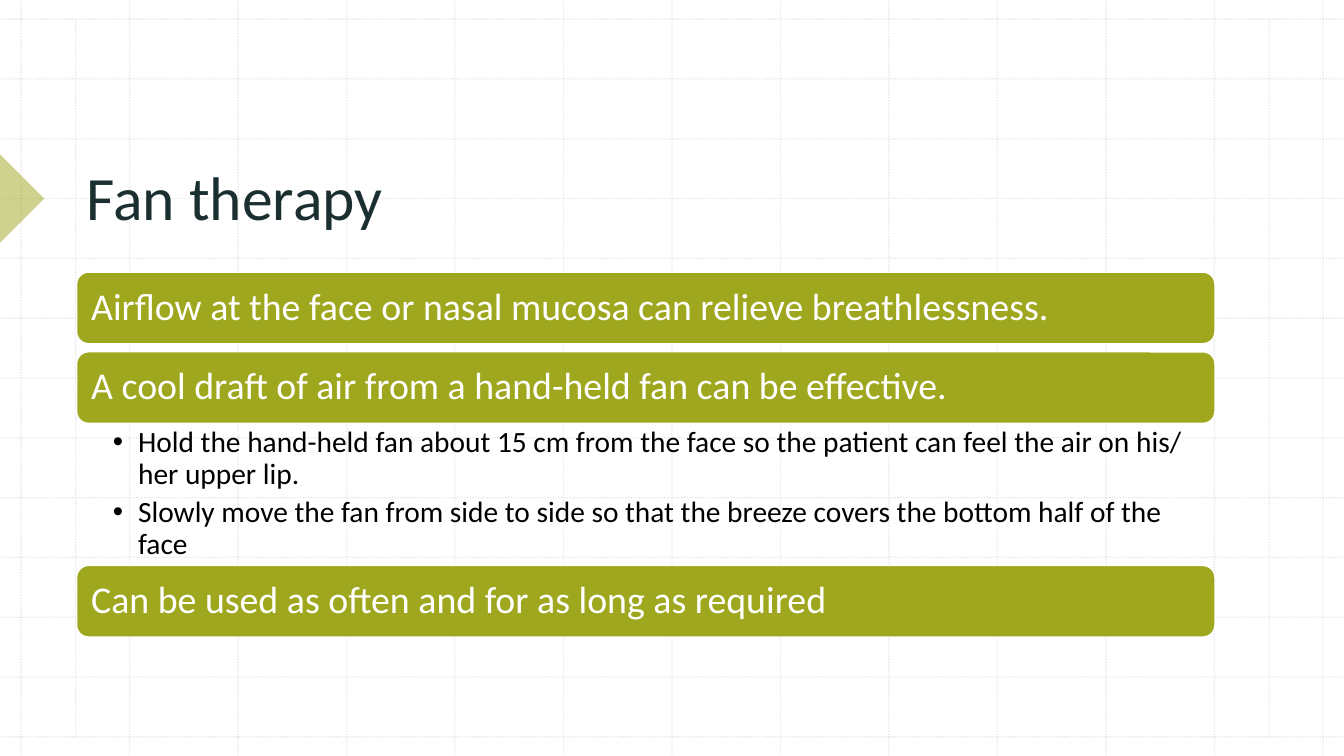
from lxml import etree
from pptx import Presentation
from pptx.dml.color import RGBColor
from pptx.enum.dml import MSO_LINE
from pptx.enum.shapes import MSO_CONNECTOR, MSO_SHAPE
from pptx.enum.text import MSO_ANCHOR, MSO_AUTO_SIZE, PP_ALIGN
from pptx.oxml.ns import qn
from pptx.util import Inches, Pt

STRAIGHT = MSO_CONNECTOR.STRAIGHT
ROUNDED = MSO_SHAPE.ROUNDED_RECTANGLE
RIGHT_TRIANGLE = MSO_SHAPE.RIGHT_TRIANGLE
DOTTED = MSO_LINE.ROUND_DOT
TOP, MIDDLE, BOTTOM = MSO_ANCHOR.TOP, MSO_ANCHOR.MIDDLE, MSO_ANCHOR.BOTTOM
LEFT = PP_ALIGN.LEFT
NO_AUTOFIT = MSO_AUTO_SIZE.NONE

WIDTH, HEIGHT = 13.33, 7.5
GRID_STEPS = 12
GRID_LEFT, GRID_TOP = 0.21, 0.19
FRAME_LEFT, FRAME_RIGHT = 0.75, 12.59
CONTENT_LEFT, CONTENT_WIDTH = 0.76, 11.29
BAR_HEIGHT, BAR_GAP = 0.71, 0.08
FIRST_BAR_TOP, TIPS_HEIGHT = 2.7, 1.41
ARROW_SIDE, ARROW_MIDDLE = 0.62, 1.97

COLORS = {
    "grid": "BCBCBC",
    "olive": "9FA71E",
    "title": "1B2F30",
    "white": "FFFFFF",
    "black": "000000",
}

AIRFLOW = "Airflow at the face or nasal mucosa can relieve breathlessness."
COOL_DRAFT = "A cool draft of air from a hand-held fan can be effective."
FAN_TIPS = [
    "Hold the hand-held fan about 15 cm from the face so the patient can feel the air on his/ her upper lip.",
    "Slowly move the fan from side to side so that the breeze covers the bottom half of the face",
]
FREQUENCY = "Can be used as often and for as long as required"


def rgb(name):
    return RGBColor.from_string(COLORS[name])


def set_opacity(color_format_parent, percent):
    color = next(color_format_parent.iter(qn("a:srgbClr")))
    etree.SubElement(color, qn("a:alpha"), val=str(percent * 1000))


def set_bullet(paragraph):
    properties = paragraph._p.get_or_add_pPr()
    indent = Inches(0.25)
    properties.set("marL", str(indent))
    properties.set("indent", str(-indent))
    etree.SubElement(properties, qn("a:buFont"), typeface="Arial")
    etree.SubElement(properties, qn("a:buChar"), char="•")


def write(shape, lines, size, color, anchor=TOP, insets=(0.1, 0.05, 0.1, 0.05),
          spacing=0.9, after=0, bullets=False):
    frame = shape.text_frame
    frame.word_wrap = True
    frame.auto_size = NO_AUTOFIT
    frame.vertical_anchor = anchor
    (frame.margin_left, frame.margin_top,
     frame.margin_right, frame.margin_bottom) = map(Inches, insets)
    frame.text = "\n".join(lines)
    for paragraph in frame.paragraphs:
        paragraph.alignment = LEFT
        paragraph.line_spacing = spacing
        paragraph.space_after = Pt(after)
        if bullets:
            set_bullet(paragraph)
        font = paragraph.runs[0].font
        font.name = "Calibri"
        font.size = Pt(size)
        font.color.rgb = rgb(color)


def add_grid_line(slide, x1, y1, x2, y2):
    grid_line = slide.shapes.add_connector(STRAIGHT, *map(Inches, (x1, y1, x2, y2)))
    grid_line.line.color.rgb = rgb("grid")
    grid_line.line.width = Pt(1)
    grid_line.line.dash_style = DOTTED
    properties = grid_line.element.spPr
    set_opacity(properties, 30)
    etree.SubElement(properties, qn("a:effectLst"))


def add_grid(slide):
    column = (WIDTH - 2 * GRID_LEFT) / GRID_STEPS
    row = (HEIGHT - 2 * GRID_TOP) / GRID_STEPS
    for step in range(GRID_STEPS + 1):
        x = GRID_LEFT + step * column
        y = GRID_TOP + step * row
        add_grid_line(slide, x, 0, x, HEIGHT)
        add_grid_line(slide, 0, y, WIDTH, y)
    for x in (FRAME_LEFT, FRAME_RIGHT):
        add_grid_line(slide, x, GRID_TOP, x, HEIGHT - GRID_TOP)


def add_filled(slide, kind, left, top, width, height):
    shape = slide.shapes.add_shape(kind, *map(Inches, (left, top, width, height)))
    shape.shadow.inherit = False
    shape.fill.solid()
    shape.fill.fore_color.rgb = rgb("olive")
    return shape


def add_title_arrow(slide):
    half = ARROW_SIDE / 2
    arrow = add_filled(slide, RIGHT_TRIANGLE, -half, ARROW_MIDDLE - half,
                       ARROW_SIDE, ARROW_SIDE)
    arrow.rotation = 225
    arrow.line.fill.background()
    set_opacity(arrow.element.spPr, 50)


def place_title(slide, text):
    title = slide.shapes.title
    title.left, title.top = Inches(CONTENT_LEFT), Inches(0.79)
    title.width, title.height = Inches(CONTENT_WIDTH), Inches(1.58)
    write(title, [text], 44, "title", anchor=BOTTOM)
    slide.shapes.element.append(title.element)


def add_bar(slide, top, text):
    bar = add_filled(slide, ROUNDED, CONTENT_LEFT, top, CONTENT_WIDTH, BAR_HEIGHT)
    bar.line.color.rgb = rgb("white")
    bar.line.width = Pt(1)
    write(bar, [text], 27, "white", anchor=MIDDLE, insets=(0.11,) * 4)


def add_tips(slide, top, tips):
    box = slide.shapes.add_textbox(*map(Inches, (CONTENT_LEFT, top, CONTENT_WIDTH, TIPS_HEIGHT)))
    write(box, tips, 21, "black", insets=(0.36, 0.04, 0.21, 0.04), after=4.5, bullets=True)


def main():
    presentation = Presentation()
    presentation.slide_width, presentation.slide_height = Inches(WIDTH), Inches(HEIGHT)
    slide = presentation.slides.add_slide(presentation.slide_layouts[5])
    slide.background.fill.solid()
    slide.background.fill.fore_color.rgb = rgb("white")

    add_grid(slide)
    add_title_arrow(slide)
    place_title(slide, "Fan therapy")

    second_bar_top = FIRST_BAR_TOP + BAR_HEIGHT + BAR_GAP
    tips_top = second_bar_top + BAR_HEIGHT
    add_bar(slide, FIRST_BAR_TOP, AIRFLOW)
    add_bar(slide, second_bar_top, COOL_DRAFT)
    add_tips(slide, tips_top, FAN_TIPS)
    add_bar(slide, tips_top + TIPS_HEIGHT, FREQUENCY)

    presentation.save("out.pptx")


if __name__ == "__main__":
    main()
